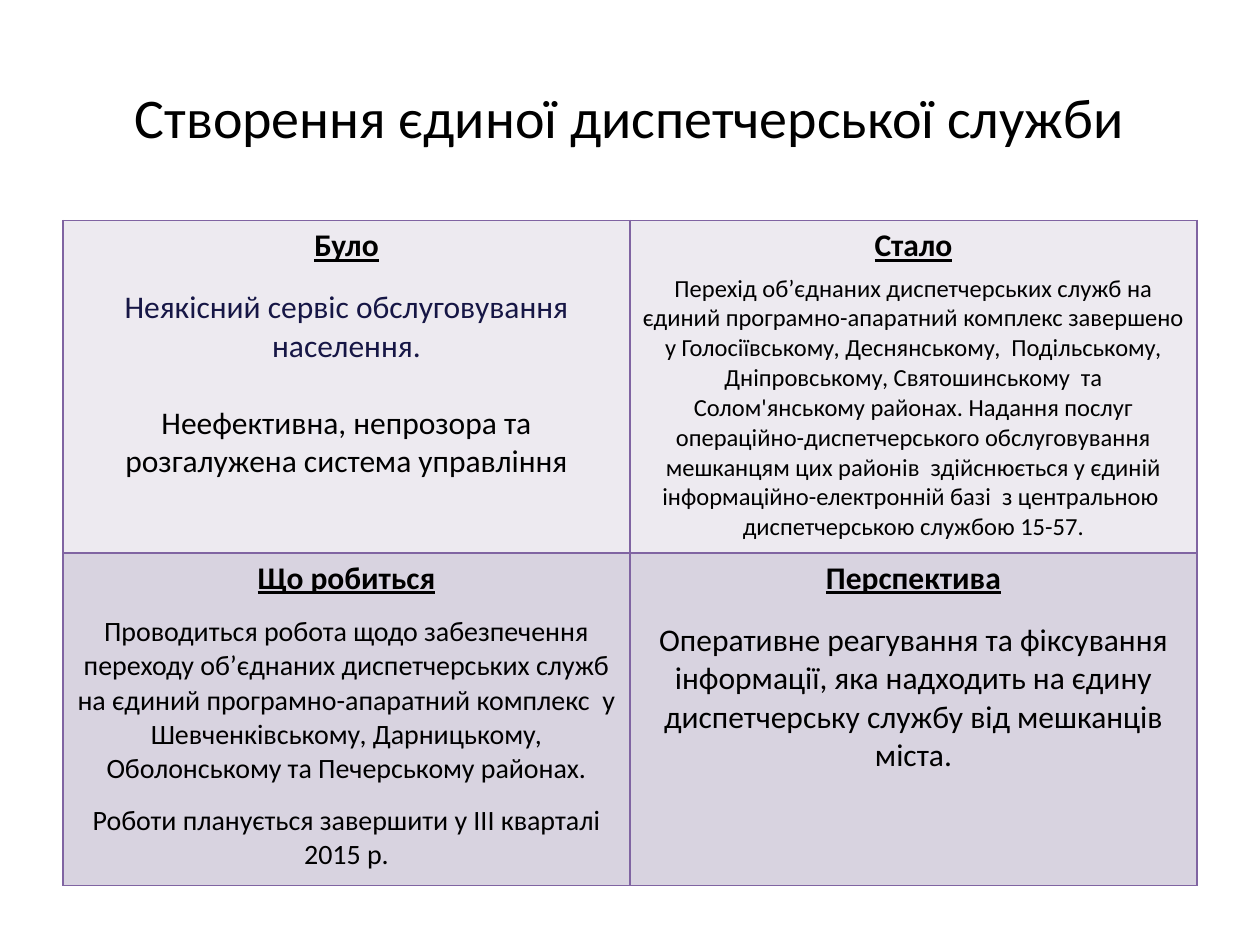
from dataclasses import dataclass

from lxml import etree
from pptx import Presentation
from pptx.dml.color import RGBColor
from pptx.enum.text import MSO_ANCHOR, PP_ALIGN
from pptx.oxml.ns import qn
from pptx.util import Inches, Pt

CENTER, MIDDLE = PP_ALIGN.CENTER, MSO_ANCHOR.MIDDLE
TITLE_ONLY = 5


@dataclass(frozen=True)
class Theme:
    font: str = "Calibri"
    text: str = "000000"
    accent: str = "161645"
    border: str = "8064A2"
    row_fills: tuple[str, ...] = ("EDEAF0", "D8D3E0")
    title_size: int = 32
    heading_size: int = 18


@dataclass(frozen=True)
class Para:
    text: str
    size: int
    before: float  # space above, points
    color: str = Theme.text


@dataclass(frozen=True)
class Quadrant:
    heading: str
    body: tuple[Para, ...]


THEME = Theme()
SLIDE_W, SLIDE_H = Inches(10), Inches(7.5)
MARGIN = 0.05  # share of the slide's width
TABLE_TOP, TABLE_H = Inches(1.75), Inches(5.28)

# Content, row by row
QUADRANTS = (
    (
        Quadrant("Було", (
            Para("Неякісний сервіс обслуговування населення.", 18, 13.4, THEME.accent),
            Para("Неефективна, непрозора та розгалужена система управління", 18, 22),
        )),
        Quadrant("Стало", (
            Para("Перехід об’єднаних диспетчерських служб на єдиний програмно-апаратний "
                 "комплекс завершено у Голосіївському, Деснянському,  Подільському, "
                 "Дніпровському, Святошинському  та Солом'янському районах. Надання "
                 "послуг операційно-диспетчерського обслуговування мешканцям цих районів  "
                 "здійснюється у єдиній інформаційно-електронній базі  з центральною  "
                 "диспетчерською службою 15-57.", 14, 4.9),
        )),
    ),
    (
        Quadrant("Що робиться", (
            Para("Проводиться робота щодо забезпечення переходу об’єднаних диспетчерських "
                 "служб на єдиний програмно-апаратний комплекс  у Шевченківському, "
                 "Дарницькому, Оболонському та Печерському районах.", 16, 9.8),
            Para("Роботи планується завершити у ІІІ кварталі 2015 р.", 16, 9.8),
        )),
        Quadrant("Перспектива", (
            Para("Оперативне реагування та фіксування інформації, яка надходить на єдину "
                 "диспетчерську службу від мешканців міста.", 18, 13.4),
        )),
    ),
)


def style(p, size: int, color: str = THEME.text, heading: bool = False) -> None:
    p.alignment = CENTER
    font = p.font
    font.name, font.size = THEME.font, Pt(size)
    font.bold = font.underline = heading
    font.color.rgb = RGBColor.from_string(color)


def set_borders(cell, color: str, width: int) -> None:
    tc_pr = cell._tc.get_or_add_tcPr()
    for i, side in enumerate(("a:lnL", "a:lnR", "a:lnT", "a:lnB")):
        ln = etree.Element(qn(side), w=str(width))
        fill = etree.SubElement(ln, qn("a:solidFill"))
        etree.SubElement(fill, qn("a:srgbClr"), val=color)
        tc_pr.insert(i, ln)


def fill_cell(cell, quadrant: Quadrant, fill: str) -> None:
    cell.fill.solid()
    cell.fill.fore_color.rgb = RGBColor.from_string(fill)
    set_borders(cell, THEME.border, Pt(1))
    tf = cell.text_frame
    p = tf.paragraphs[0]
    p.text = quadrant.heading
    style(p, THEME.heading_size, heading=True)
    for para in quadrant.body:
        p = tf.add_paragraph()
        p.text = para.text
        p.space_before = Pt(para.before)
        style(p, para.size, para.color)


def add_title(s, text: str) -> None:
    title = s.shapes.title
    title.left, title.top = int(SLIDE_W * MARGIN), int(SLIDE_H * 0.04)
    title.width, title.height = int(SLIDE_W * (1 - 2 * MARGIN)), Inches(1.25)
    tf = title.text_frame
    tf.text = text
    tf.vertical_anchor = MIDDLE
    style(tf.paragraphs[0], THEME.title_size)


def add_quadrants(s) -> None:
    rows, cols = len(QUADRANTS), len(QUADRANTS[0])
    table = s.shapes.add_table(rows, cols, int(SLIDE_W * MARGIN), TABLE_TOP,
                               int(SLIDE_W * (1 - 2 * MARGIN)), TABLE_H).table
    table.first_row = table.horz_banding = False
    for r, (row, fill) in enumerate(zip(QUADRANTS, THEME.row_fills)):
        for c, quadrant in enumerate(row):
            fill_cell(table.cell(r, c), quadrant, fill)


def main() -> None:
    prs = Presentation()
    prs.slide_width, prs.slide_height = SLIDE_W, SLIDE_H
    s = prs.slides.add_slide(prs.slide_layouts[TITLE_ONLY])
    add_title(s, "Створення єдиної диспетчерської служби")
    add_quadrants(s)
    prs.save("out.pptx")


if __name__ == "__main__":
    main()
